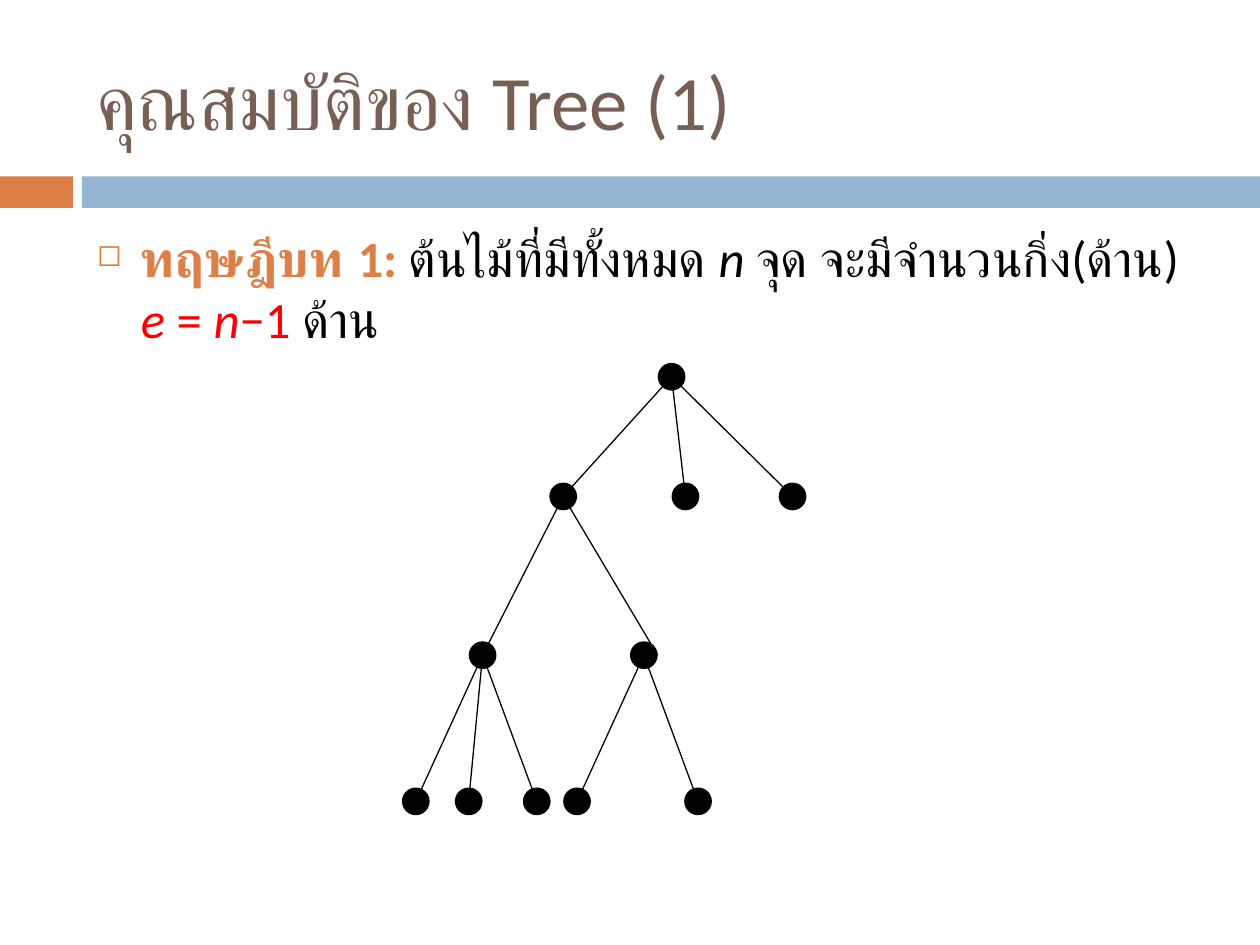
from lxml.etree import SubElement
from pptx import Presentation
from pptx.dml.color import RGBColor
from pptx.enum.shapes import MSO_CONNECTOR, MSO_SHAPE
from pptx.enum.text import MSO_ANCHOR
from pptx.oxml.ns import qn
from pptx.util import Inches, Pt

ORANGE = RGBColor(0xDD, 0x80, 0x47)
BLUE = RGBColor(0x94, 0xB6, 0xD2)
BROWN = RGBColor(0x77, 0x5F, 0x55)
RED = RGBColor(0xFF, 0, 0)
BLACK = RGBColor(0, 0, 0)
FONT = "Calibri"

# Content
TITLE = "คุณสมบัติของ Tree (1)"
THEOREM = [  # text, colour, bold, italic
    ("ทฤษฎีบท 1: ", ORANGE, True, False),
    ("ต้นไม้ที่มีทั้งหมด ", BLACK, False, False),
    ("n ", BLACK, False, True),
    ("จุด จะมีจำนวนกิ่ง(ด้าน) ", BLACK, False, False),
    ("e ", RED, False, True),
    ("= ", RED, False, False),
    ("n", RED, False, True),
    ("−1 ", RED, False, False),
    ("ด้าน", BLACK, False, False),
]
BANDS = [(0, 0.58, ORANGE), (0.65, 9.35, BLUE)]  # left, width, colour

# Tree: the height of each level, then node: (centre x, level, parent)
LEVELS = [2.99, 3.94, 5.2, 6.36]
NODES = {
    "root": (5.33, 0, None),
    "left": (4.47, 1, "root"),
    "middle": (5.44, 1, "root"),
    "right": (6.29, 1, "root"),
    "left a": (3.83, 2, "left"),
    "left b": (5.11, 2, "left"),
    "leaf 1": (3.3, 3, "left a"),
    "leaf 2": (3.72, 3, "left a"),
    "leaf 3": (4.26, 3, "left a"),
    "leaf 4": (4.58, 3, "left b"),
    "leaf 5": (5.54, 3, "left b"),
}
EDGE_SHIFT = {"left b": 0.11}  # this edge ends right of its node's centre
DIAMETER = 0.21

presentation = Presentation()
presentation.slide_width, presentation.slide_height = Inches(10), Inches(7.5)
slide = presentation.slides.add_slide(presentation.slide_layouts[6])


def add_shape(kind, left, top, width, height, colour):
    shape = slide.shapes.add_shape(
        kind, Inches(left), Inches(top), Inches(width), Inches(height))
    shape.shadow.inherit = False
    shape.fill.solid()
    shape.fill.fore_color.rgb = colour
    return shape


def add_text(top, height):
    frame = slide.shapes.add_textbox(
        Inches(0.67), Inches(top), Inches(8.92), Inches(height)).text_frame
    frame.word_wrap = True
    return frame


# Bands under the title
for left, width, colour in BANDS:
    band = add_shape(MSO_SHAPE.RECTANGLE, left, 1.4, width, 0.25, colour)
    band.line.fill.background()

# Title
frame = add_text(0.25, 1.08)
frame.vertical_anchor = MSO_ANCHOR.MIDDLE
paragraph = frame.paragraphs[0]
paragraph.text = TITLE
paragraph.font.name, paragraph.font.size = FONT, Pt(44)
paragraph.font.color.rgb = BROWN

# Theorem with its bullet
paragraph = add_text(1.75, 4.92).paragraphs[0]
paragraph.space_before = Pt(7)
properties = paragraph._p.get_or_add_pPr()
properties.set("marL", str(Inches(0.35)))
properties.set("indent", str(-Inches(0.35)))
bullet_colour = SubElement(properties, qn("a:buClr"))
SubElement(bullet_colour, qn("a:srgbClr"), val=str(ORANGE))
SubElement(properties, qn("a:buSzPct"), val="60000")
SubElement(properties, qn("a:buChar"), char="◻")
paragraph.font.name, paragraph.font.size = FONT, Pt(29)
for text, colour, bold, italic in THEOREM:
    run = paragraph.add_run()
    run.text = text
    run.font.bold, run.font.italic = bold, italic
    run.font.color.rgb = colour

# Edges
for name, (x, level, parent) in NODES.items():
    if parent:
        parent_x, parent_level, _ = NODES[parent]
        edge = slide.shapes.add_connector(
            MSO_CONNECTOR.STRAIGHT,
            Inches(parent_x), Inches(LEVELS[parent_level]),
            Inches(x + EDGE_SHIFT.get(name, 0)), Inches(LEVELS[level]))
        edge.line.color.rgb, edge.line.width = BLACK, Pt(0.75)
        SubElement(edge._element.spPr, qn("a:effectLst"))

# Nodes
for x, level, _ in NODES.values():
    node = add_shape(MSO_SHAPE.OVAL, x - DIAMETER / 2, LEVELS[level] - DIAMETER / 2,
                     DIAMETER, DIAMETER, BLACK)
    node.line.color.rgb, node.line.width = BLACK, Pt(0.75)

presentation.save("out.pptx")
